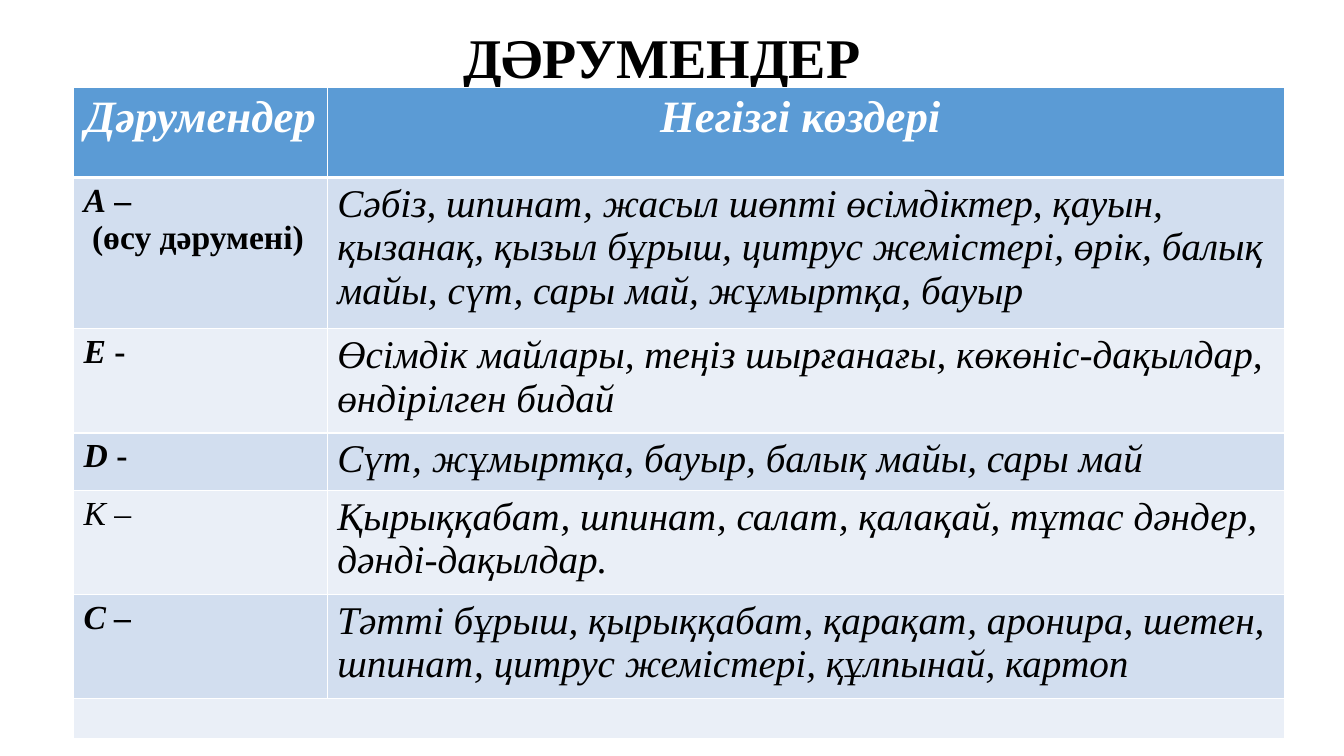
import pptx
import pptx.util
import pptx.dml.color
import pptx.enum.text
import pptx.oxml
import pptx.oxml.ns
from pptx.util import Pt

FONT = "Times New Roman"
CENTER = pptx.enum.text.PP_ALIGN.CENTER


def color(hex_string):
    return pptx.dml.color.RGBColor.from_string(hex_string)


def add_run(paragraph, text, size, ink="000000", bold=False, italic=False):
    run = paragraph.add_run()
    run.text = text
    formats = {"name": FONT, "size": Pt(size), "bold": bold, "italic": italic}
    for key, value in formats.items():
        setattr(run.font, key, value)
    run.font.color.rgb = color(ink)


deck = pptx.Presentation()
deck.slide_width, deck.slide_height = Pt(960), Pt(540)
slide = deck.slides.add_slide(deck.slide_layouts[6])

# Title
title = slide.shapes.add_textbox(Pt(105.84), Pt(0), Pt(733.68), Pt(68.4))
title.text_frame.word_wrap = True
title.text_frame.vertical_anchor = pptx.enum.text.MSO_ANCHOR.BOTTOM
heading = title.text_frame.paragraphs[0]
heading.alignment = CENTER
heading.line_spacing = 0.9
add_run(heading, "ДӘРУМЕНДЕР", 40, bold=True)

# Vitamins: lines of (text, bold, italic) runs, then the main sources
vitamins = [
    ([[("А", True, True), (" –", True, False)],
      [(" (өсу дәрумені)", True, False)]],
     "Сәбіз, шпинат, жасыл шөпті өсімдіктер, қауын, қызанақ, қызыл бұрыш, "
     "цитрус жемістері, өрік, балық майы, сүт, сары май, жұмыртқа, бауыр"),
    ([[("E", True, True), (" -", True, False)]],
     "Өсімдік майлары, теңіз шырғанағы, көкөніс-дақылдар, өндірілген бидай"),
    ([[("D", True, True), (" -", True, False)]],
     "Сүт, жұмыртқа, бауыр, балық майы, сары май"),
    ([[("K ", False, True), ("–", False, False)]],
     "Қырыққабат, шпинат, салат, қалақай, тұтас дәндер, дәнді-дақылдар."),
    ([[("С –", True, True)]],
     "Тәтті бұрыш, қырыққабат, қарақат, аронира, шетен, шпинат, "
     "цитрус жемістері, құлпынай, картоп"),
]

# Table grid
widths = [181.2, 684]
heights = [64.08, 102.96, 70.56, 38.88, 70.56, 70.56, 27.5]
table = slide.shapes.add_table(len(heights), len(widths), Pt(52.56), Pt(62.64),
                               Pt(sum(widths)), Pt(sum(heights))).table
for column, width in zip(table.columns, widths):
    column.width = Pt(width)
for row, height in zip(table.rows, heights):
    row.height = Pt(height)

# Header
for cell, text in zip(table.rows[0].cells, ["Дәрумендер", "Негізгі көздері "]):
    label = cell.text_frame.paragraphs[0]
    label.alignment = CENTER
    add_run(label, text, 32, "FFFFFF", True, True)

# Body
for index, (name_lines, sources) in enumerate(vitamins, 1):
    name_frame = table.cell(index, 0).text_frame
    for number, line in enumerate(name_lines):
        paragraph = name_frame.add_paragraph() if number else name_frame.paragraphs[0]
        for text, bold, italic in line:
            add_run(paragraph, text, 24, bold=bold, italic=italic)
    add_run(table.cell(index, 1).text_frame.paragraphs[0], sources, 28, italic=True)
table.cell(len(heights) - 1, 0).merge(table.cell(len(heights) - 1, 1))

# Fills and white borders, thicker under the header
for index, row in enumerate(table.rows):
    band = "5B9BD5" if index == 0 else ("EAEFF7", "D2DEEF")[index % 2]
    for cell in row.cells:
        properties = cell._tc.get_or_add_tcPr()
        for side in ("L", "R", "T", "B"):
            thick = (index, side) in ((0, "B"), (1, "T"))
            properties.append(pptx.oxml.parse_xml(
                f'<a:ln{side} {pptx.oxml.ns.nsdecls("a")} w="{Pt(3 if thick else 1)}">'
                f'<a:solidFill><a:srgbClr val="FFFFFF"/></a:solidFill></a:ln{side}>'))
        cell.fill.solid()
        cell.fill.fore_color.rgb = color(band)

deck.save("out.pptx")
